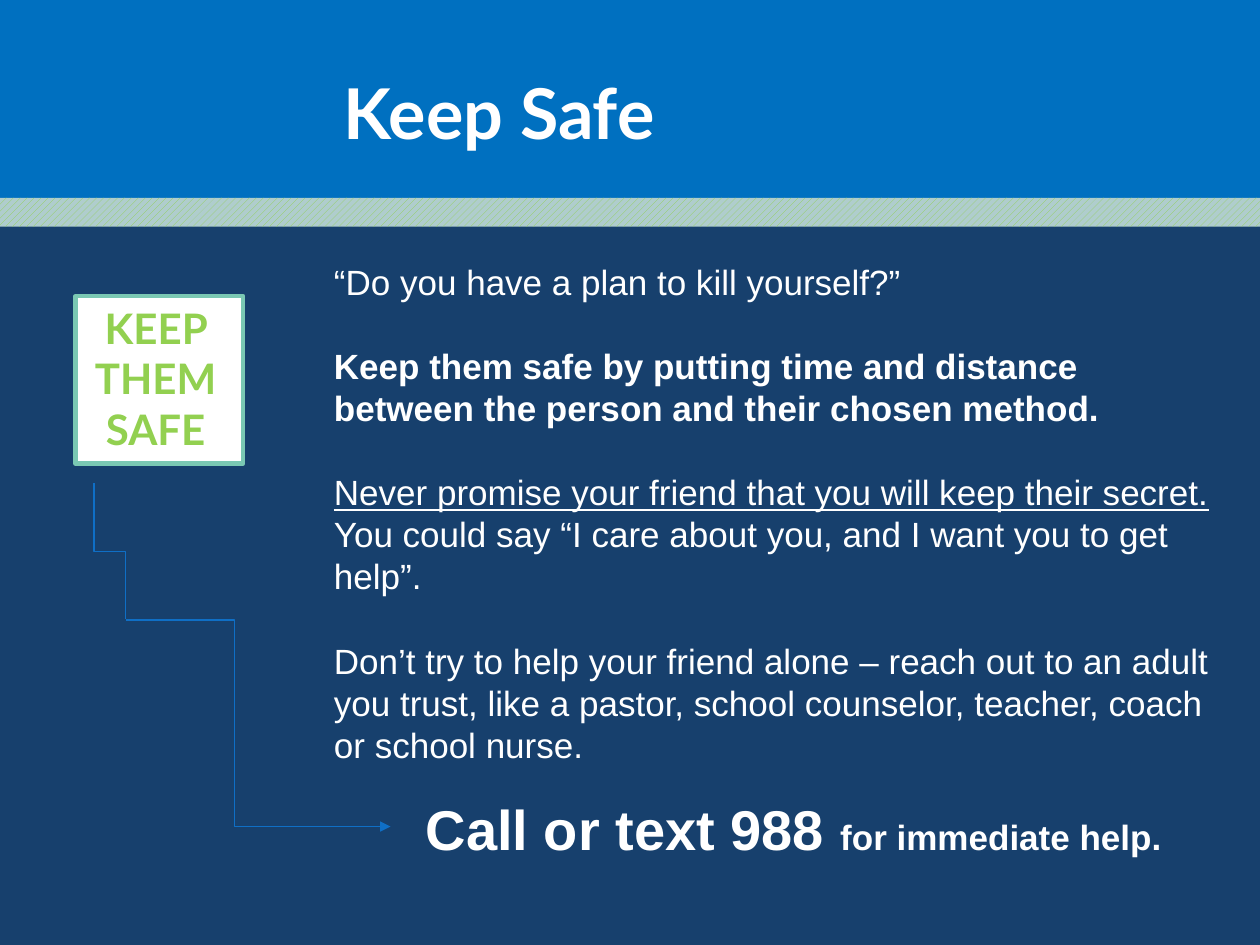
from lxml import etree
from pptx import Presentation
from pptx.dml.color import RGBColor
from pptx.enum.dml import MSO_PATTERN
from pptx.enum.shapes import MSO_CONNECTOR, MSO_SHAPE
from pptx.enum.text import MSO_ANCHOR, MSO_AUTO_SIZE, PP_ALIGN
from pptx.oxml.ns import qn
from pptx.util import Inches, Pt

RECT = MSO_SHAPE.RECTANGLE
ELBOW = MSO_CONNECTOR.ELBOW
WIDE_UP = MSO_PATTERN.WIDE_UPWARD_DIAGONAL
TOP = MSO_ANCHOR.TOP
NO_FIT = MSO_AUTO_SIZE.NONE
LEFT, CENTER = PP_ALIGN.LEFT, PP_ALIGN.CENTER

BLUE, NAVY, WHITE, GREEN = "0070C0", "17406D", "FFFFFF", "92D050"
PALE_TEAL, TEAL, ARROW_BLUE = "AFCDCD", "7AC8B3", "0F6FC6"


def rgb(value):
    return RGBColor.from_string(value)


class SlideBuilder:
    heading_font = "Lato"
    body_font = "Arial"

    def __init__(self, prs):
        self.s = prs.slides.add_slide(prs.slide_layouts[1])
        self.s.background.fill.solid()
        self.s.background.fill.fore_color.rgb = rgb(BLUE)

    def rect(self, box, fill, line=None, width=0, pattern_back=None):
        sp = self.s.shapes.add_shape(RECT, *map(Inches, box))
        sp.shadow.inherit = False
        if pattern_back:
            sp.fill.patterned()
            sp.fill.pattern = WIDE_UP
            sp.fill.back_color.rgb = rgb(pattern_back)
        else:
            sp.fill.solid()
        sp.fill.fore_color.rgb = rgb(fill)
        if line:
            sp.line.color.rgb = rgb(line)
            sp.line.width = Pt(width)
        else:
            sp.line.fill.background()

    def fill_text(self, sp, box, paragraphs, align=CENTER, gap=0, spacing=None, **style):
        """Place a text shape and fill it; a paragraph is a list of (text, format) runs."""
        sp.left, sp.top, sp.width, sp.height = map(Inches, box)
        tf = sp.text_frame
        tf.word_wrap, tf.auto_size, tf.vertical_anchor = True, NO_FIT, TOP
        for i, runs in enumerate(paragraphs):
            p = tf.paragraphs[0] if i == 0 else tf.add_paragraph()
            p.alignment = align
            p.space_before = Pt(gap if i else 0)
            if spacing:
                p.line_spacing = Pt(spacing)
            if sp.is_placeholder:
                pPr = p._p.get_or_add_pPr()
                pPr.set("marL", "0")
                pPr.set("indent", "0")
                etree.SubElement(pPr, qn("a:buNone"))
            for text, extra in runs:
                r = p.add_run()
                r.text = text
                self.style_font(r.font, {**style, **extra})

    def style_font(self, font, values):
        values = {"name": self.body_font, "color": WHITE, **values}
        font.color.rgb = rgb(values.pop("color"))
        values["size"] = Pt(values["size"])
        for name, value in values.items():
            setattr(font, name, value)

    def title(self, box, text, **style):
        self.fill_text(self.s.shapes.title, box, [[(text, {})]], **style)

    def body(self, box, paragraphs, **style):
        self.fill_text(self.s.placeholders[1], box, paragraphs, **style)

    def text(self, box, paragraphs, **style):
        sp = self.s.shapes.add_textbox(*map(Inches, box))
        self.fill_text(sp, box, paragraphs, **style)

    def elbow(self, begin, end, adjust=0.5, rotation=0, arrow=False):
        sp = self.s.shapes.add_connector(ELBOW, *map(Inches, (*begin, *end)))
        sp.line.color.rgb = rgb(ARROW_BLUE)
        sp.line.width = Pt(0.75)
        spPr = sp._element.spPr
        etree.SubElement(spPr, qn("a:effectLst"))
        spPr.find(qn("a:xfrm")).set("rot", str(rotation * 60000))
        guides = spPr.find(qn("a:prstGeom")).get_or_add_avLst()
        etree.SubElement(guides, qn("a:gd"), name="adj1", fmla=f"val {round(adjust * 100000)}")
        if arrow:
            etree.SubElement(spPr.find(qn("a:ln")), qn("a:tailEnd"), type="triangle")


def main():
    prs = Presentation()
    prs.slide_width, prs.slide_height = Inches(10), Inches(7.5)
    slide = SlideBuilder(prs)

    slide.rect((0, 1.62, 10, 5.88), NAVY)
    slide.rect((0, 1.57, 10, 0.23), GREEN, pattern_back=PALE_TEAL)
    slide.title((1.2, 0.5, 5.52, 0.77), "Keep Safe",
                name=slide.heading_font, size=40, bold=True)

    slide.rect((0.6, 2.35, 1.33, 1.33), WHITE, line=TEAL, width=2.5)
    slide.text((0.43, 2.35, 1.61, 1.31), [[("KEEP THEM SAFE", {})]],
               name=slide.heading_font, size=24, bold=True, color=GREEN)

    # The placeholders lie behind the panel unless moved to the front
    tree = slide.s.shapes._spTree
    for sp in list(slide.s.placeholders):
        tree.append(sp._element)

    advice = [
        [("“Do you have a plan to kill yourself?”", {})],
        [("Keep them safe by putting time and distance between the person "
          "and their chosen method.", {"bold": True})],
        [("Never promise your friend that you will keep their secret.", {"underline": True}),
         (" You could say “I care about you, and I want you to get help”.", {})],
        [("Don’t try to help your friend alone – reach out to an adult you trust, "
          "like a pastor, school counselor, teacher, coach or school nurse.", {})],
    ]
    slide.body((2.55, 2.02, 7.2, 4.15), advice, align=LEFT, gap=24, spacing=24, size=20)
    slide.text((3.1, 6.26, 6.4, 0.94),
               [[("Call or text 988 ", {"size": 32}), ("for immediate help.", {})]],
               size=20, bold=True)

    slide.elbow((1, 4.92), (3.1, 6.56), adjust=0.41, arrow=True)
    # Turned a quarter, this one runs down, across and down to the start of the arrow
    slide.elbow((1.41, 4.25), (0.33, 4.5), rotation=270)

    prs.save("out.pptx")


if __name__ == "__main__":
    main()
